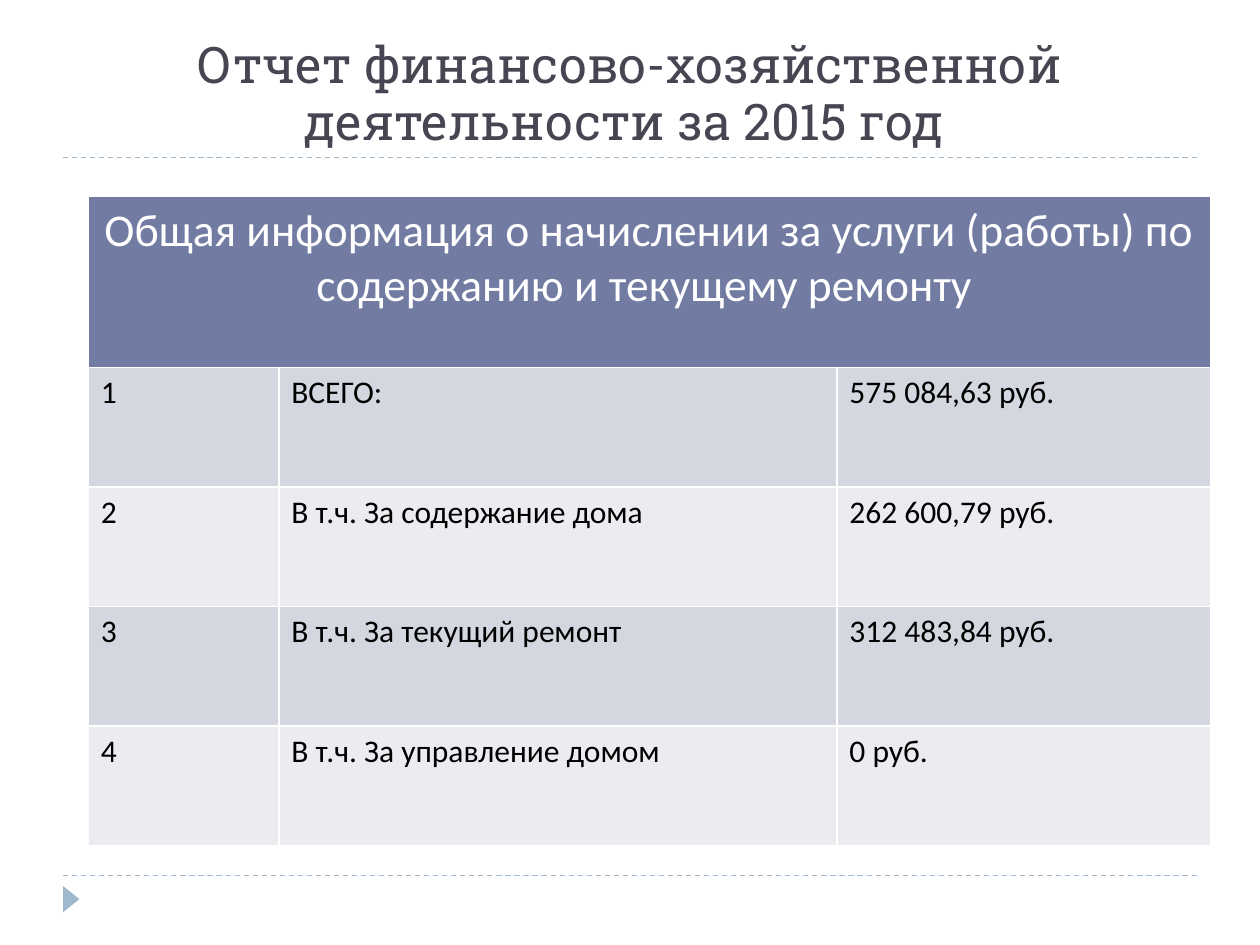
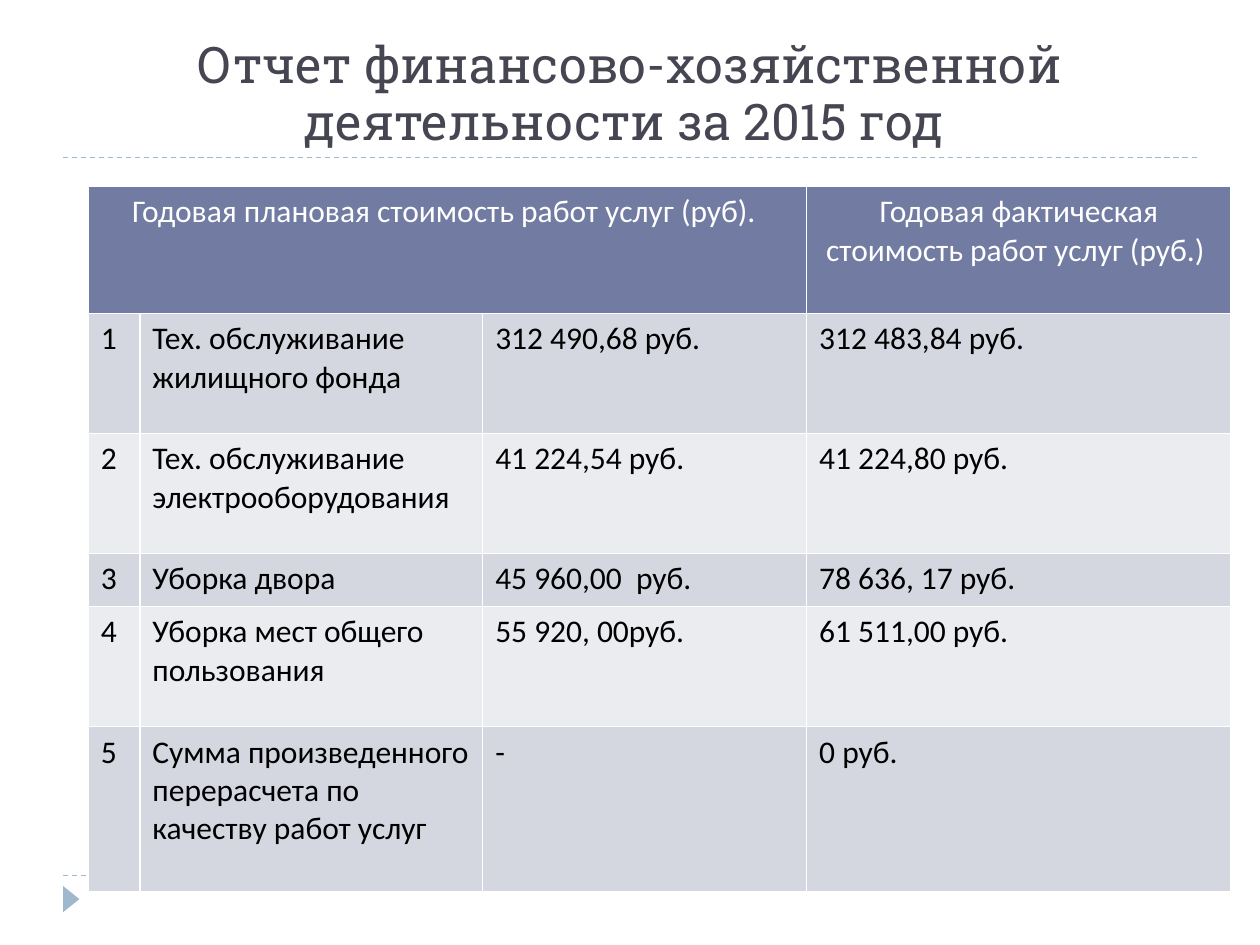
import pptx
import pptx.dml.color
import pptx.enum.dml
import pptx.enum.shapes
import pptx.enum.text
import pptx.util
from lxml import etree

Cm = pptx.util.Cm
Pt = pptx.util.Pt

INK = "464653"
ACCENT = "9FB8CD"
HEADER = "727CA3"
BANDS = ["D5D7E0", "EBECF0"]
REPORT_TITLE = "Отчет финансово-хозяйственной деятельности за 2015 год "


def color(hex_value):
    return pptx.dml.color.RGBColor.from_string(hex_value)


def fill_cell(cell, text, background, ink, size, align):
    cell.fill.solid()
    cell.fill.fore_color.rgb = color(background)
    cell.text = text
    paragraph = cell.text_frame.paragraphs[0]
    paragraph.alignment = align
    paragraph.font.name = "Calibri"
    paragraph.font.size = Pt(size)
    paragraph.font.bold = False
    paragraph.font.color.rgb = color(ink)


reports = [
    {
        "top": 3.96,
        "columns": [3.84, 11.25, 7.54],
        "heights": [3.45] + [2.41] * 4,
        "header_size": 26,
        "headers": {0: "Общая информация о начислении за услуги (работы) по содержанию и текущему ремонту "},
        "entries": [
            ["ВСЕГО:", "575 084,63 руб."],
            ["В т.ч. За содержание дома", "262 600,79 руб."],
            ["В т.ч. За текущий ремонт", "312 483,84 руб."],
            ["В т.ч. За управление домом", "0 руб."],
        ],
    },
    {
        "top": 3.76,
        "columns": [1.04, 6.91, 6.53, 8.56],
        "heights": [2.56, 2.42, 2.42, 1.07, 2.42, 3.33],
        "header_size": 18,
        "headers": {
            0: "Годовая плановая стоимость работ услуг (руб). ",
            3: "Годовая фактическая стоимость работ услуг (руб.) ",
        },
        "entries": [
            ["Тех. обслуживание жилищного фонда", "312 490,68 руб.", "312 483,84 руб."],
            ["Тех. обслуживание электрооборудования", "41 224,54 руб.", "41 224,80 руб."],
            ["Уборка двора", "45 960,00  руб.", "78 636, 17 руб."],
            ["Уборка мест общего пользования", "55 920, 00руб.", "61 511,00 руб."],
            ["Сумма произведенного перерасчета по качеству работ услуг", "-", "0 руб."],
        ],
    },
]

deck = pptx.Presentation()
deck.slide_width = Cm(25.4)
deck.slide_height = Cm(19.05)

for report in reports:
    slide = deck.slides.add_slide(deck.slide_layouts[5])

    for rule_y in (17.65, 3.18):
        rule = slide.shapes.add_connector(
            pptx.enum.shapes.MSO_CONNECTOR.STRAIGHT, Cm(1.27), Cm(rule_y), Cm(24.13), Cm(rule_y))
        rule.line.color.rgb = color(ACCENT)
        rule.line.width = Pt(0.75)
        rule.line.dash_style = pptx.enum.dml.MSO_LINE.DASH
        etree.SubElement(rule._element.spPr, pptx.oxml.ns.qn("a:effectLst"))

    marker = slide.shapes.add_shape(
        pptx.enum.shapes.MSO_SHAPE.ISOSCELES_TRIANGLE, Cm(1.17), Cm(17.96), Cm(0.53), Cm(0.33))
    marker.rotation = 90
    marker.shadow.inherit = False
    marker.fill.solid()
    marker.fill.fore_color.rgb = color(ACCENT)
    marker.line.fill.background()

    title = slide.shapes.title
    title.left, title.top, title.width, title.height = Cm(1.27), Cm(0.64), Cm(22.86), Cm(2.54)
    title.text = REPORT_TITLE
    title.text_frame.auto_size = pptx.enum.text.MSO_AUTO_SIZE.NONE
    title.text_frame.vertical_anchor = pptx.enum.text.MSO_ANCHOR.BOTTOM
    heading = title.text_frame.paragraphs[0]
    heading.alignment = pptx.enum.text.PP_ALIGN.CENTER
    heading.line_spacing = 0.93
    heading.font.name = "Roboto Slab"
    heading.font.size = Pt(28.8)
    heading.font.color.rgb = color(INK)

    columns, heights = report["columns"], report["heights"]
    costs = slide.shapes.add_table(
        len(heights), len(columns), Cm(1.78), Cm(report["top"]),
        Cm(sum(columns)), Cm(sum(heights))).table
    for column, width in zip(costs.columns, columns):
        column.width = Cm(width)
    for row, height in zip(costs.rows, heights):
        row.height = Cm(height)

    costs.cell(0, 0).merge(costs.cell(0, 2))
    for position, text in report["headers"].items():
        fill_cell(costs.cell(0, position), text, HEADER, "FFFFFF",
                  report["header_size"], pptx.enum.text.PP_ALIGN.CENTER)

    for number, entry in enumerate(report["entries"], start=1):
        for position, text in enumerate([str(number)] + entry):
            fill_cell(costs.cell(number, position), text, BANDS[(number - 1) % 2], "000000",
                      18, pptx.enum.text.PP_ALIGN.LEFT)

deck.save("out.pptx")
